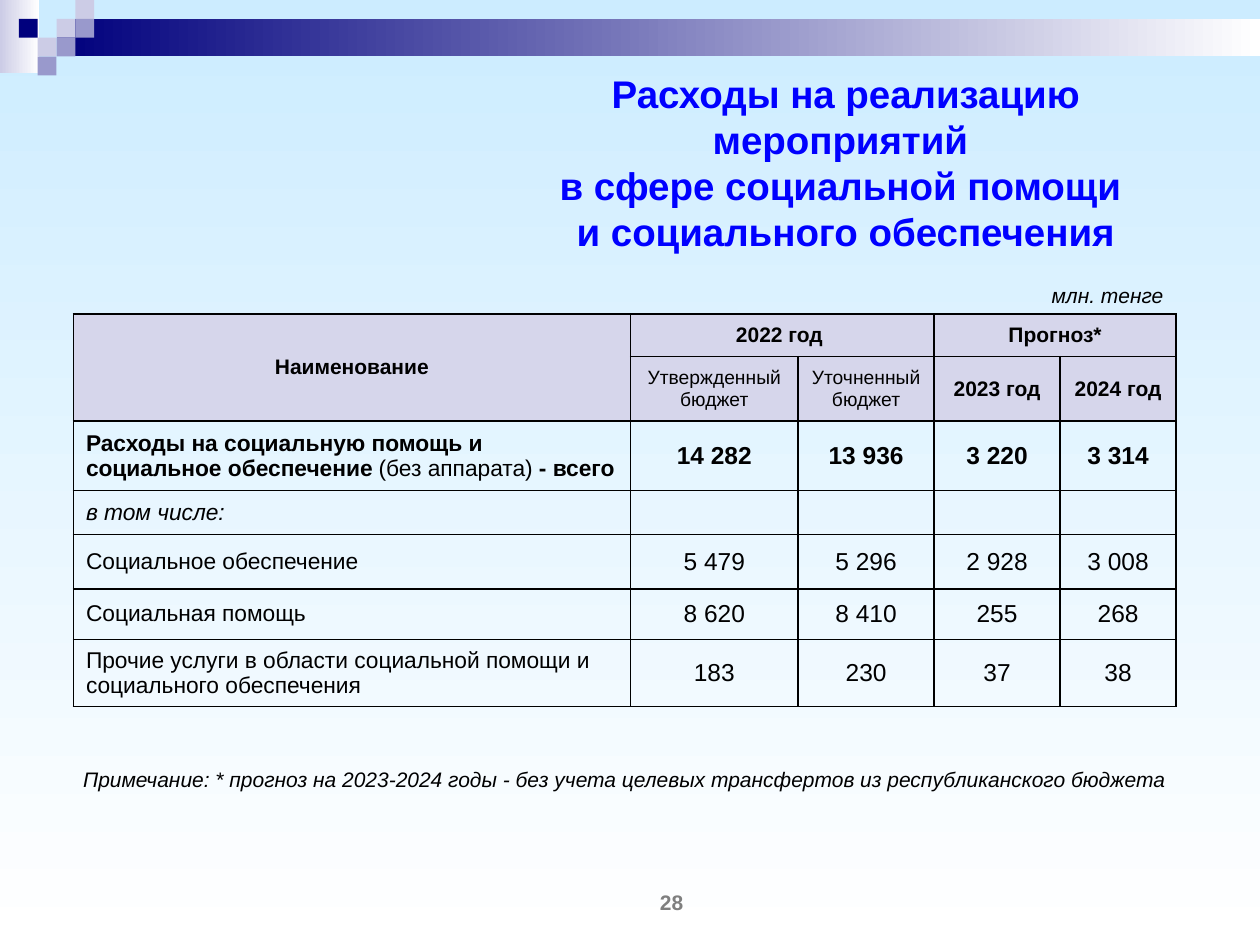
from typing import NamedTuple

from lxml.etree import SubElement
from pptx import Presentation
from pptx.dml.color import RGBColor
from pptx.enum.shapes import MSO_SHAPE as Shape
from pptx.enum.text import MSO_ANCHOR as Anchor, MSO_AUTO_SIZE as Fit, PP_ALIGN as Align
from pptx.oxml.ns import qn
from pptx.util import Cm, Pt

NAVY, LILAC, VIOLET, WHITE = "00007D", "CCCCE6", "9999CC", "FFFFFF"
BLACK, HEAD = "000000", "D6D6EB"
UNIT = 0.38  # side of a corner square, cm


class Square(NamedTuple):
    col: int
    row: int
    color: str


class Label(NamedTuple):
    text: str
    row: int
    col: int
    size: float = 12
    bold: bool = True


class Item(NamedTuple):
    """A body row: the runs of its name as (text, bold), then its values."""
    name: list
    values: list
    bold: bool = False
    italic: bool = False


SQUARES = [
    Square(3, 1, LILAC), Square(4, 0, LILAC), Square(4, 1, VIOLET), Square(2, 2, LILAC),
    Square(1, 1, NAVY), Square(3, 2, VIOLET), Square(2, 3, VIOLET),
]
HEADS = [
    Label("Наименование", 1, 0),
    Label("2022 год ", 1, 1),
    Label("Прогноз*", 1, 3),
    Label("Утвержденный бюджет", 2, 1, 11, False),
    Label("Уточненный бюджет", 2, 2, 11, False),
    Label("2023 год", 2, 3),
    Label("2024 год", 2, 4),
]
ITEMS = [
    Item([("Расходы на социальную помощь и социальное обеспечение ", True),
          ("(без аппарата)", False), (" - всего", True)],
         ["14 282", "13 936", "3 220", "3 314"], bold=True),
    Item([("в том числе:", False)], [], italic=True),
    Item([("Социальное обеспечение", False)], ["5 479", "5 296", "2 928", "3 008"]),
    Item([("Социальная помощь", False)], ["8 620", "8 410", "255", "268"]),
    Item([("Прочие услуги в области социальной помощи и социального обеспечения", False)],
         ["183", "230", "37", "38"]),
]
COLS = [11.23, 3.38, 2.74, 2.54, 2.34]
ROWS = [0.81, 0.86, 1.3, 1.4, 0.89, 1.09, 1.02, 1.35]
MERGES = [((0, 0), (0, 4)), ((1, 0), (2, 0)), ((1, 1), (1, 2)), ((1, 3), (1, 4))]


def rgb(code: str) -> RGBColor:
    return RGBColor.from_string(code)


def blend(fill, start: str, end: str, angle: float = 0) -> None:
    fill.gradient()
    fill.gradient_angle = angle
    for stop, code in zip(fill.gradient_stops, (start, end)):
        stop.color.rgb = rgb(code)


def write(frame, text: str, *, size: float, color: str = BLACK, bold: bool = False,
          italic: bool = False, align=Align.CENTER, before: float = 0) -> None:
    """Append text to the first paragraph; before is a share of the size."""
    para = frame.paragraphs[0]
    para.alignment = align
    para.space_before = Pt(round(size * before, 1))
    for i, line in enumerate(text.split("\n")):
        if i:
            para.add_line_break()
        run = para.add_run()
        run.text = line
        font = run.font
        font.name, font.size = "Arial", Pt(size)
        font.bold, font.italic = bold, italic
        font.color.rgb = rgb(color)


def draw_bar(slide, x: float, y: float, w: float, h: float, start: str, end: str = "") -> None:
    """Draw a plain rectangle, blended from left to right if end is given."""
    bar = slide.shapes.add_shape(Shape.RECTANGLE, Cm(x), Cm(y), Cm(w), Cm(h))
    bar.shadow.inherit = False
    bar.line.fill.background()
    if end:
        blend(bar.fill, start, end)
    else:
        bar.fill.solid()
        bar.fill.fore_color.rgb = rgb(start)


def add_note(slide, text: str, x: float, y: float, w: float, h: float,
             anchor=Anchor.TOP, **style) -> None:
    frame = slide.shapes.add_textbox(Cm(x), Cm(y), Cm(w), Cm(h)).text_frame
    frame.word_wrap = True
    frame.vertical_anchor = anchor
    write(frame, text, size=12, **style)


def set_edges(cell, sides: str) -> None:
    """Rule the named sides in black and clear the others."""
    props = cell._tc.get_or_add_tcPr()
    for side in "LRTB":
        line = SubElement(props, qn(f"a:ln{side}"), w=str(Pt(1)))
        if side in sides:
            paint = SubElement(line, qn("a:solidFill"))
            SubElement(paint, qn("a:srgbClr"), val=BLACK)
        else:
            SubElement(line, qn("a:noFill"))


def add_grid(slide):
    """Add the empty table with its sizes, edges, fills and merged cells."""
    grid = slide.shapes.add_table(len(ROWS), len(COLS), Cm(1.48), Cm(5.52),
                                  Cm(sum(COLS)), Cm(sum(ROWS))).table
    for col, width in zip(grid.columns, COLS):
        col.width = Cm(width)
    for r, height in enumerate(ROWS):
        grid.rows[r].height = Cm(height)
        for cell in grid.rows[r].cells:
            set_edges(cell, "LRTB" if r else "B")
            cell.vertical_anchor = Anchor.MIDDLE if r else Anchor.BOTTOM
            if r in (1, 2):
                cell.fill.solid()
                cell.fill.fore_color.rgb = rgb(HEAD)
            else:
                cell.fill.background()
    for first, last in MERGES:
        grid.cell(*first).merge(grid.cell(*last))
    return grid


def fill_grid(grid) -> None:
    write(grid.cell(0, 0).text_frame, "млн. тенге", size=12, italic=True,
          align=Align.RIGHT, before=0.2)
    for head in HEADS:
        write(grid.cell(head.row, head.col).text_frame, head.text, size=head.size,
              bold=head.bold, before=0.2)
    for r, item in enumerate(ITEMS, 3):
        for text, bold in item.name:
            write(grid.cell(r, 0).text_frame, text, size=13, bold=bold,
                  italic=item.italic, align=Align.LEFT, before=0.2)
        for c, value in enumerate(item.values, 1):
            write(grid.cell(r, c).text_frame, value, size=14, bold=item.bold, before=0.2)
    for cell in grid.iter_cells():
        if not cell.text_frame.text:
            para = cell.text_frame.paragraphs[0]._p
            SubElement(para, qn("a:endParaRPr"), sz="1200")


def add_title(slide) -> None:
    title = slide.shapes.title
    title.left, title.top, title.width, title.height = Cm(9.53), Cm(1.58), Cm(15.04), Cm(3.38)
    frame = title.text_frame
    frame.auto_size = Fit.NONE
    frame.word_wrap = True
    frame.vertical_anchor = Anchor.MIDDLE
    write(frame, "Расходы на реализацию мероприятий \nв сфере социальной помощи \n"
          "и социального обеспечения", size=22, color="0000FF", bold=True)


def main() -> None:
    deck = Presentation()
    deck.slide_width, deck.slide_height = Cm(25.4), Cm(19.05)
    slide = deck.slides.add_slide(deck.slide_layouts[5])
    blend(slide.background.fill, "CCECFF", WHITE, 270)
    draw_bar(slide, 0, 0, 0.79, 1.47, LILAC, WHITE)
    draw_bar(slide, 3 * UNIT, UNIT, 24.26, 2 * UNIT, NAVY, WHITE)
    for spot in SQUARES:
        draw_bar(slide, spot.col * UNIT, spot.row * UNIT, UNIT, UNIT, spot.color)
    add_title(slide)
    fill_grid(add_grid(slide))
    add_note(slide, "28", 11, 17.98, 5.08, 0.58, Anchor.BOTTOM, color="7F7F7F", bold=True)
    add_note(slide, "Примечание: * прогноз на 2023-2024 годы - без учета целевых "
             "трансфертов из республиканского бюджета", 1.27, 15.32, 22.66, 0.76, italic=True)
    deck.save("out.pptx")


if __name__ == "__main__":
    main()
